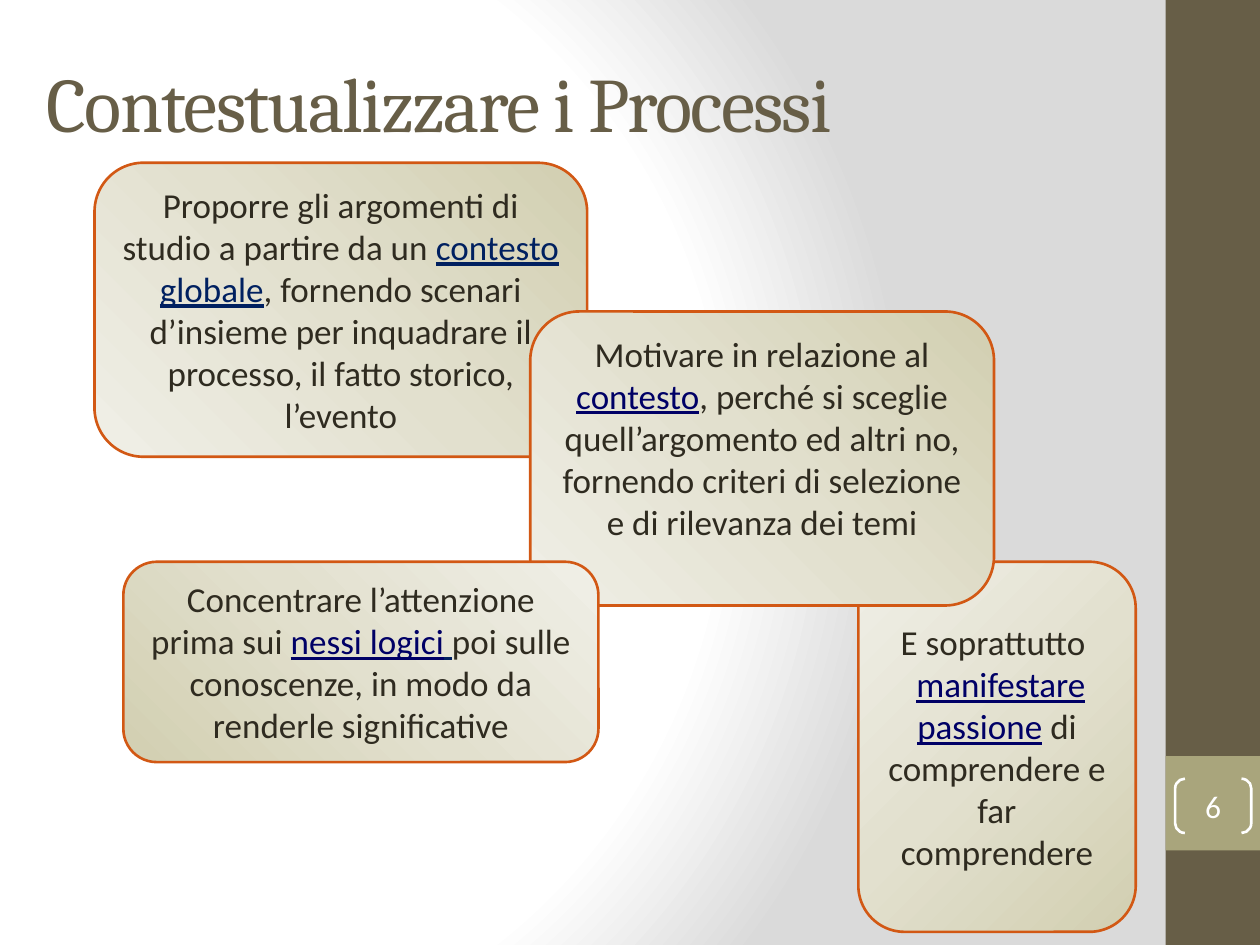
import pptx
import pptx.dml.color
import pptx.enum.shapes
import pptx.enum.text
import pptx.oxml
import pptx.oxml.ns
import pptx.util
from lxml import etree

Pt = pptx.util.Pt
RGBColor = pptx.dml.color.RGBColor
SHAPES = pptx.enum.shapes.MSO_SHAPE
ALIGN = pptx.enum.text.PP_ALIGN
ANCHOR = pptx.enum.text.MSO_ANCHOR
AUTO_SIZE = pptx.enum.text.MSO_AUTO_SIZE
qn = pptx.oxml.ns.qn

BROWN = RGBColor(0x67, 0x5E, 0x47)
OLIVE = RGBColor(0xA9, 0xA5, 0x7C)
ORANGE = RGBColor(0xD2, 0x58, 0x14)
INK = RGBColor(0x2F, 0x2B, 0x20)
NAVY = RGBColor(0x00, 0x20, 0x60)
BLUE = RGBColor(0x00, 0x00, 0x66)
WHITE = RGBColor(0xFF, 0xFF, 0xFF)
GREY = RGBColor(0xDA, 0xDA, 0xDA)

PAGE_STOPS = [(0, WHITE), (75, WHITE), (100, GREY)]
BOX_STOPS = [(0, RGBColor(0xD2, 0xCF, 0xB1)),
             (50, RGBColor(0xE2, 0xE0, 0xCE)),
             (100, RGBColor(0xF0, 0xEF, 0xE7))]
TOP_RIGHT = (100, 0, 0, 100)


def set_gradient(fill, owner, stops, angle=None, focus=None):
    """Linear gradient for an angle, circular for a focus (l, t, r, b in %)."""
    fill.gradient()
    gradient = next(owner.iter(qn("a:gradFill")))
    for child in list(gradient):
        gradient.remove(child)
    stop_list = etree.SubElement(gradient, qn("a:gsLst"))
    for position, color in stops:
        stop = etree.SubElement(stop_list, qn("a:gs"), pos=str(position * 1000))
        etree.SubElement(stop, qn("a:srgbClr"), val=str(color))
    if focus is None:
        etree.SubElement(gradient, qn("a:lin"), ang=str(angle * 60000), scaled="0")
    else:
        circle = etree.SubElement(gradient, qn("a:path"), path="circle")
        etree.SubElement(circle, qn("a:fillToRect"),
                         {side: str(value * 1000) for side, value in zip("ltrb", focus)})


def add_plain_shape(slide, preset, bounds, fill=None, line=None):
    shape = slide.shapes.add_shape(preset, *map(Pt, bounds))
    shape.shadow.inherit = False
    if fill is None:
        shape.fill.background()
    else:
        shape.fill.solid()
        shape.fill.fore_color.rgb = fill
    if line is None:
        shape.line.fill.background()
    else:
        shape.line.color.rgb = line
        shape.line.width = Pt(1.5)
    return shape


def add_run(paragraph, text, size, color, font="Calibri", underline=None):
    run = paragraph.add_run()
    run.text = text
    run.font.size = Pt(size)
    run.font.name = font
    run.font.color.rgb = color
    run.font.underline = underline
    return run


def set_space_before(paragraph, percent):
    properties = paragraph._p.get_or_add_pPr()
    space = etree.SubElement(properties, qn("a:spcBef"))
    etree.SubElement(space, qn("a:spcPct"), val=str(percent * 1000))


def add_title(slide, text):
    title = slide.shapes.add_textbox(Pt(19.5), Pt(26), Pt(603.5), Pt(92))
    frame = title.text_frame
    frame.word_wrap = True
    frame.margin_top = Pt(6)
    run = add_run(frame.paragraphs[0], text, 44, BROWN, "Cambria")
    run.font._element.set("spc", "-100")


def add_page_number(slide, number):
    bracket = add_plain_shape(slide, SHAPES.DOUBLE_BRACKET,
                              (671.5, 445, 43.5, 31), line=WHITE)
    bracket.adjustments[0] = 0.18
    frame = bracket.text_frame
    frame.margin_left = frame.margin_right = 0
    frame.margin_top = frame.margin_bottom = 0
    frame.vertical_anchor = ANCHOR.MIDDLE
    paragraph = frame.paragraphs[0]
    paragraph.alignment = ALIGN.CENTER
    add_run(paragraph, number, 18, WHITE)


def add_box(slide, bounds, paragraphs, space_before=None, **gradient):
    """Rounded box; a run's colour other than INK marks an underlined key term."""
    box = add_plain_shape(slide, SHAPES.ROUNDED_RECTANGLE, bounds, line=ORANGE)
    set_gradient(box.fill, box.element.spPr, BOX_STOPS, **gradient)
    frame = box.text_frame
    frame.word_wrap = True
    if space_before is None:
        frame.vertical_anchor = ANCHOR.MIDDLE
    else:
        frame.vertical_anchor = ANCHOR.TOP
        frame.auto_size = AUTO_SIZE.SHAPE_TO_FIT_TEXT
    for index, runs in enumerate(paragraphs):
        paragraph = frame.add_paragraph() if index else frame.paragraphs[0]
        paragraph.alignment = ALIGN.CENTER
        if space_before is not None:
            set_space_before(paragraph, space_before)
        for text, color in runs:
            add_run(paragraph, text, 20, color, underline=color != INK)


def main():
    deck = pptx.Presentation()
    deck.slide_width, deck.slide_height = Pt(720), Pt(540)
    slide = deck.slides.add_slide(deck.slide_layouts[6])

    # Background and side band
    set_gradient(slide.background.fill, slide.element, PAGE_STOPS,
                 focus=(20, 50, 100, 50))
    add_plain_shape(slide, SHAPES.RECTANGLE, (666, 0, 54, 540), BROWN)
    add_plain_shape(slide, SHAPES.RECTANGLE, (666, 432, 54, 54), OLIVE)

    # Title and page number
    add_title(slide, "Contestualizzare i Processi")
    add_page_number(slide, "6")

    # Overlapping boxes, back to front
    add_box(slide, (54, 93, 281.5, 168), [[
        ("Proporre gli argomenti di studio a partire da un ", INK),
        ("contesto globale", NAVY),
        (", fornendo scenari d’insieme per inquadrare il processo, "
         "il fatto storico, l’evento", INK),
    ]], space_before=50, focus=TOP_RIGHT)
    add_box(slide, (490.5, 321, 158.5, 211.5), [
        [("E soprattutto ", INK)],
        [(" ", INK), ("manifestare passione", BLUE),
         (" di comprendere e far comprendere", INK)],
    ], angle=225)
    add_box(slide, (303, 178, 265, 168), [[
        ("Motivare in relazione al ", INK),
        ("contesto", BLUE),
        (", perché si sceglie quell’argomento ed altri no, fornendo criteri "
         "di selezione e di rilevanza dei temi", INK),
    ]], space_before=50, focus=TOP_RIGHT)
    add_box(slide, (70.5, 321, 271.5, 114.5), [[
        ("Concentrare l’attenzione prima sui ", INK),
        ("nessi logici", BLUE),
        (" ", NAVY),
        ("poi sulle conoscenze, in modo da renderle significative", INK),
    ]], space_before=20, angle=315)

    deck.save("out.pptx")


if __name__ == "__main__":
    main()
